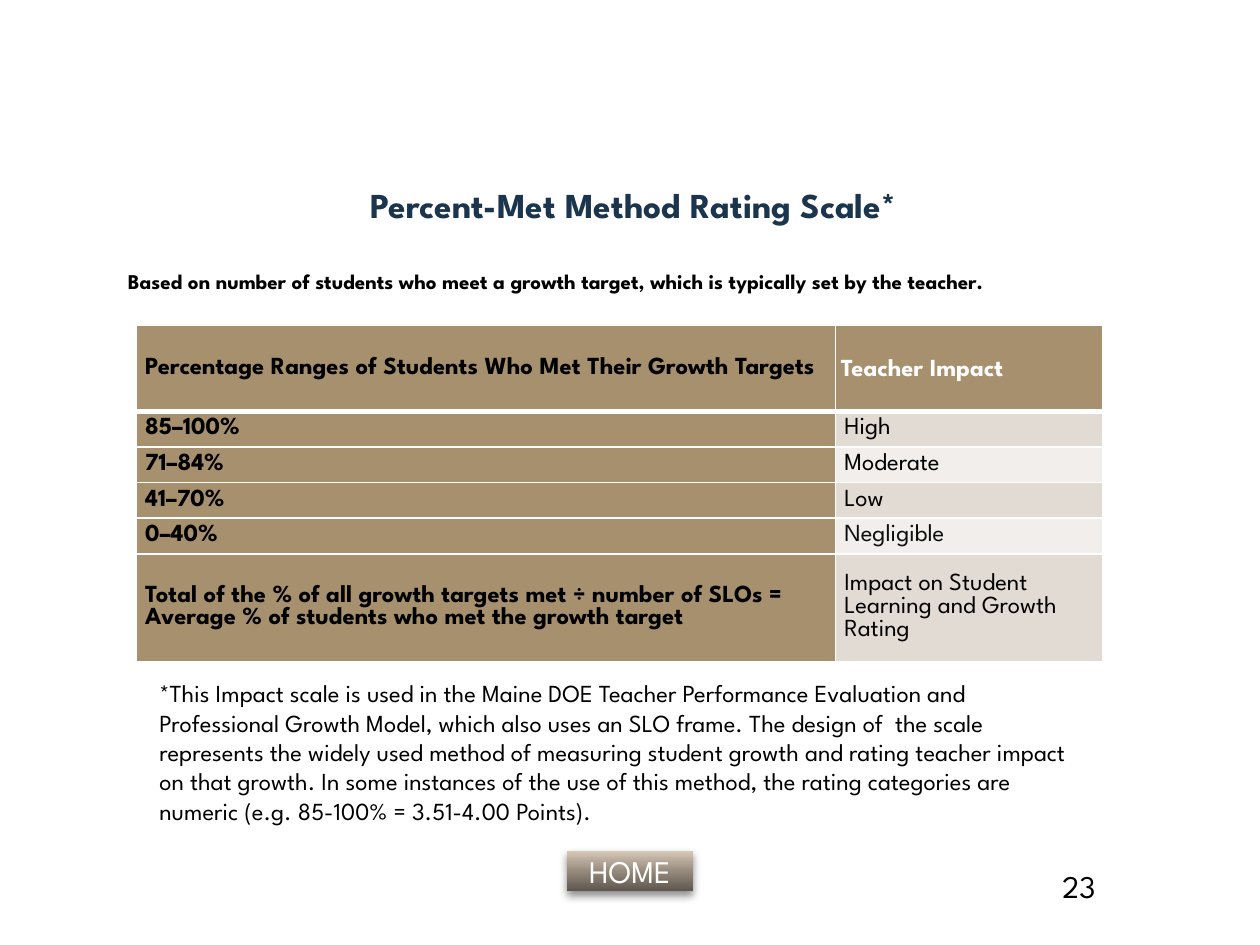
import pptx
import pptx.dml.color
import pptx.enum.shapes
import pptx.enum.text
import pptx.oxml
import pptx.oxml.ns
import pptx.util

Pt = pptx.util.Pt
RGBColor = pptx.dml.color.RGBColor
PP_ALIGN = pptx.enum.text.PP_ALIGN
MIDDLE = pptx.enum.text.MSO_ANCHOR.MIDDLE

FONT = "League Spartan"
BLACK = RGBColor(0x00, 0x00, 0x00)
NEAR_BLACK = RGBColor(0x0D, 0x0D, 0x0D)
WHITE = RGBColor(0xFF, 0xFF, 0xFF)
NAVY = RGBColor(0x1A, 0x35, 0x4D)
TAN = RGBColor(0xA6, 0x90, 0x6D)
BANDS = (RGBColor(0xE1, 0xDB, 0xD4), RGBColor(0xF1, 0xEE, 0xEB))
BUTTON_STOPS = (
    (0, RGBColor(0x5F, 0x57, 0x4E)),
    (50, RGBColor(0x98, 0x8C, 0x7E)),
    (70, RGBColor(0xB2, 0xA5, 0x96)),
    (100, RGBColor(0xD8, 0xCA, 0xB8)),
)

HEADERS = ("Percentage Ranges of Students Who Met Their Growth Targets", "Teacher Impact")
RATINGS = (
    ("85–100%", "High"),
    ("71–84%", "Moderate"),
    ("41–70%", "Low"),
    ("0–40%", "Negligible"),
    (
        "Total of the % of all growth targets met ÷ number of SLOs = "
        "Average % of students who met the growth target",
        "Impact on Student Learning and Growth Rating",
    ),
)
FOOTNOTE = (
    "*This Impact scale is used in the Maine DOE Teacher Performance Evaluation and "
    "Professional Growth Model, which also uses an SLO frame. The design of  the scale "
    "represents the widely used method of measuring student growth and rating teacher "
    "impact on that growth. In some instances of the use of this method, the rating "
    "categories are numeric (e.g. 85-100% = 3.51-4.00 Points)."
)


def write(frame, words, size, color=BLACK, bold=False, align=PP_ALIGN.LEFT, leading=1.2):
    """Fill a text frame with one formatted paragraph."""
    frame.word_wrap = True
    frame.text = words
    paragraph = frame.paragraphs[0]
    paragraph.alignment = align
    paragraph.line_spacing = Pt(round(size * leading, 1))
    for run in paragraph.runs:
        run.font.name = FONT
        run.font.size = Pt(size)
        run.font.bold = bold
        run.font.color.rgb = color
    return paragraph


def place_title(slide, left, top, width, height):
    """Place the title, raised half a line above the middle of its box."""
    title = slide.shapes.title
    title.left, title.top, title.width, title.height = map(Pt, (left, top, width, height))
    frame = title.text_frame
    write(frame, "Percent-Met Method Rating Scale*", 20, NAVY, True, PP_ALIGN.CENTER)
    frame.vertical_anchor = MIDDLE
    frame.margin_top, frame.margin_bottom = Pt(3.6), Pt(27.6)


def place_text(slide, left, top, width, height, words, size, bold=False):
    """Place a plain text box."""
    box = slide.shapes.add_textbox(*map(Pt, (left, top, width, height)))
    write(box.text_frame, words, size, bold=bold)


def border_cell(cell, bottom_width):
    """Draw white borders around a table cell."""
    properties = cell._tc.get_or_add_tcPr()
    for index, side in enumerate(("lnL", "lnR", "lnT", "lnB")):
        width = Pt(bottom_width if side == "lnB" else 1)
        properties.insert(index, pptx.oxml.parse_xml(
            f'<a:{side} {pptx.oxml.ns.nsdecls("a")} w="{width}"><a:solidFill>'
            f'<a:srgbClr val="{WHITE}"/></a:solidFill></a:{side}>'))


def style_cell(cell, words, fill, color, bold, bottom_width=1):
    """Write, fill and border one table cell."""
    cell.margin_left = cell.margin_right = Pt(5)
    cell.margin_top = cell.margin_bottom = 0
    cell.vertical_anchor = MIDDLE
    paragraph = write(cell.text_frame, words, 14, color, bold, leading=0.93)
    paragraph.space_after = Pt(2)
    cell.fill.solid()
    cell.fill.fore_color.rgb = fill
    border_cell(cell, bottom_width)


def place_rating_table(slide, left, top, width, height):
    """Place the table that maps percentage ranges to teacher impact."""
    frame = slide.shapes.add_table(len(RATINGS) + 1, 2, *map(Pt, (left, top, width, height)))
    table = frame.table
    impact_width = 152.5
    table.columns[0].width = Pt(width - impact_width)
    table.columns[1].width = Pt(impact_width)
    header_height, total_height = 49, 61.4
    rating_height = (height - header_height - total_height) / (len(RATINGS) - 1)
    heights = [header_height] + [rating_height] * (len(RATINGS) - 1) + [total_height]
    for row, row_height in zip(table.rows, heights):
        row.height = Pt(row_height)

    for column, (words, color) in enumerate(zip(HEADERS, (BLACK, WHITE))):
        style_cell(table.cell(0, column), words, TAN, color, True, 3)
    impact_header = table.cell(0, 1)
    impact_header.margin_left = Pt(3)
    impact_header.text_frame.paragraphs[0].line_spacing = Pt(15)

    for row, (share, impact) in enumerate(RATINGS, start=1):
        style_cell(table.cell(row, 0), share, TAN, BLACK, True)
        color = NEAR_BLACK if impact == "Negligible" else BLACK
        style_cell(table.cell(row, 1), impact, BANDS[(row - 1) % 2], color, False)


def place_home_button(slide, left, top, width, height):
    """Place the shaded home button with its soft shadow."""
    button = slide.shapes.add_shape(
        pptx.enum.shapes.MSO_SHAPE.ACTION_BUTTON_CUSTOM, *map(Pt, (left, top, width, height)))
    button.line.fill.background()
    button.shadow.inherit = False
    namespace = pptx.oxml.ns.nsdecls("a")
    stops = "".join(
        f'<a:gs pos="{position * 1000}"><a:srgbClr val="{color}"/></a:gs>'
        for position, color in BUTTON_STOPS)
    properties = button._element.spPr
    properties.insert(2, pptx.oxml.parse_xml(
        f'<a:gradFill {namespace} rotWithShape="1"><a:gsLst>{stops}</a:gsLst>'
        '<a:lin ang="16200000" scaled="0"/></a:gradFill>'))
    properties.find(pptx.oxml.ns.qn("a:effectLst")).append(pptx.oxml.parse_xml(
        f'<a:outerShdw {namespace} blurRad="{Pt(5)}" dist="{Pt(3)}" dir="5400000" '
        f'rotWithShape="0"><a:srgbClr val="{BLACK}"><a:alpha val="45000"/></a:srgbClr>'
        '</a:outerShdw>'))
    write(button.text_frame, "HOME", 18, WHITE, align=PP_ALIGN.CENTER)
    button.text_frame.vertical_anchor = MIDDLE


def main():
    """Build the rating scale slide and save it."""
    deck = pptx.Presentation()
    deck.slide_width, deck.slide_height = Pt(720), Pt(540)
    slide = deck.slides.add_slide(deck.slide_layouts[5])
    place_home_button(slide, 324, 486, 72, 23)
    place_title(slide, 2, 96, 720, 66)
    place_rating_table(slide, 78, 186, 552, 192)
    place_text(slide, 84, 384, 546, 92, FOOTNOTE, 14)
    place_text(
        slide, 66, 150, 582, 36,
        "Based on number of students who meet a growth target, "
        "which is typically set by the teacher.", 12, True)
    place_text(slide, 600, 492, 84, 37, "23", 18)
    deck.save("out.pptx")


if __name__ == "__main__":
    main()
